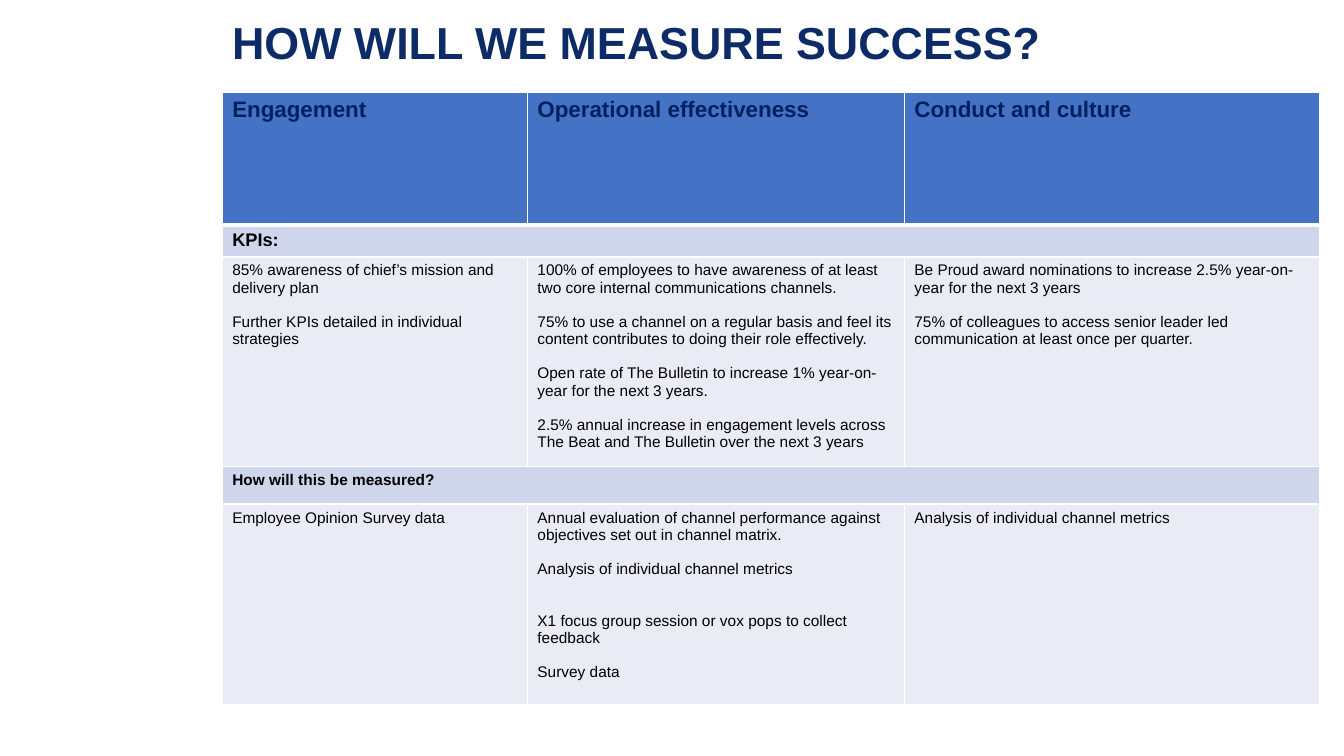
from lxml import etree
from pptx import Presentation
from pptx import util as u
from pptx.dml.color import RGBColor
from pptx.enum import text
from pptx.oxml.ns import qn

COLOURS = {
    "title": "0D2B67",
    "heading": "002060",
    "body": "000000",
    "header": "4472C4",
    "band": "CFD5EA",
    "cell": "E9EBF5",
    "border": "FFFFFF",
}
LINE = 12.3
COLUMN_WIDTHS = [7.69, 9.5, 10.46]
ROWS = [
    ("header", 3.35, ["Engagement", "Operational effectiveness", "Conduct and culture"]),
    ("band", 0.74, ["KPIs:"]),
    ("cell", 5.01, [
        ["85% awareness of chief’s mission and delivery plan",
         "Further KPIs detailed in individual strategies"],
        ["100% of employees to have awareness of at least two core internal communications channels.",
         "75% to use a channel on a regular basis and feel its content contributes to doing their role effectively.",
         "Open rate of The Bulletin to increase 1% year-on-year for the next 3 years.",
         "2.5% annual increase in engagement levels across The Beat and The Bulletin over the next 3 years"],
        ["Be Proud award nominations to increase 2.5% year-on-year for the next 3 years",
         "75% of colleagues to access senior leader led communication at least once per quarter."],
    ]),
    ("band", 0.94, ["How will this be measured?"]),
    ("cell", 5.05, [
        ["Employee Opinion Survey data"],
        ["Annual evaluation of channel performance against objectives set out in channel matrix.",
         "Analysis of individual channel metrics",
         ("X1 focus group session or vox pops to collect feedback", 2),
         "Survey data"],
        ["Analysis of individual channel metrics"],
    ]),
]
TEXT_SIZES = [16, 13, 11, 11, 11]


def colour(name):
    return RGBColor.from_string(COLOURS[name])


def set_font(para, size, name, bold):
    para.font.name = "Arial"
    para.font.size = u.Pt(size)
    para.font.bold = bold
    para.font.color.rgb = colour(name)


def set_borders(cell, top, bottom):
    properties = cell._tc.get_or_add_tcPr()
    for side, width in (("L", 1), ("R", 1), ("T", top), ("B", bottom)):
        line = etree.SubElement(properties, qn(f"a:ln{side}"), w=str(u.Pt(width)))
        fill = etree.SubElement(line, qn("a:solidFill"))
        etree.SubElement(fill, qn("a:srgbClr"), val=COLOURS["border"])


def write_cell(cell, entries, size, name, bold):
    frame = cell.text_frame
    for index, entry in enumerate(entries):
        words, gap = entry if isinstance(entry, tuple) else (entry, 1)
        para = frame.add_paragraph() if index else frame.paragraphs[0]
        para.text = words
        if index:
            para.space_before = u.Pt(gap * LINE)
        set_font(para, size, name, bold)


def add_title(page, left, top, width, height):
    box = page.shapes.add_textbox(u.Cm(left), u.Cm(top), u.Cm(width), u.Cm(height))
    frame = box.text_frame
    frame.word_wrap = True
    frame.vertical_anchor = text.MSO_ANCHOR.MIDDLE
    para = frame.paragraphs[0]
    para.text = "HOW WILL WE MEASURE SUCCESS?"
    para.line_spacing = 0.9
    set_font(para, 32, "title", True)


def add_measures(page, left, top):
    width = sum(COLUMN_WIDTHS)
    height = sum(row[1] for row in ROWS)
    table = page.shapes.add_table(
        len(ROWS), len(COLUMN_WIDTHS), u.Cm(left), u.Cm(top), u.Cm(width), u.Cm(height)
    ).table
    for column, column_width in zip(table.columns, COLUMN_WIDTHS):
        column.width = u.Cm(column_width)
    for index, (kind, row_height, contents) in enumerate(ROWS):
        row = table.rows[index]
        row.height = u.Cm(row_height)
        for cell in row.cells:
            set_borders(cell, 3 if index == 1 else 1, 3 if index == 0 else 1)
            cell.fill.solid()
            cell.fill.fore_color.rgb = colour(kind)
        if kind == "band":
            table.cell(index, 0).merge(table.cell(index, len(COLUMN_WIDTHS) - 1))
        name = "heading" if kind == "header" else "body"
        for cell, content in zip(row.cells, contents):
            entries = [content] if isinstance(content, str) else content
            write_cell(cell, entries, TEXT_SIZES[index], name, kind != "cell")


def main():
    deck = Presentation()
    deck.slide_width = u.Cm(33.87)
    deck.slide_height = u.Cm(19.05)
    page = deck.slides.add_slide(deck.slide_layouts[6])
    add_title(page, 5.6, 0.33, 28, 1.63)
    add_measures(page, 5.6, 2.32)
    deck.save("out.pptx")


if __name__ == "__main__":
    main()
